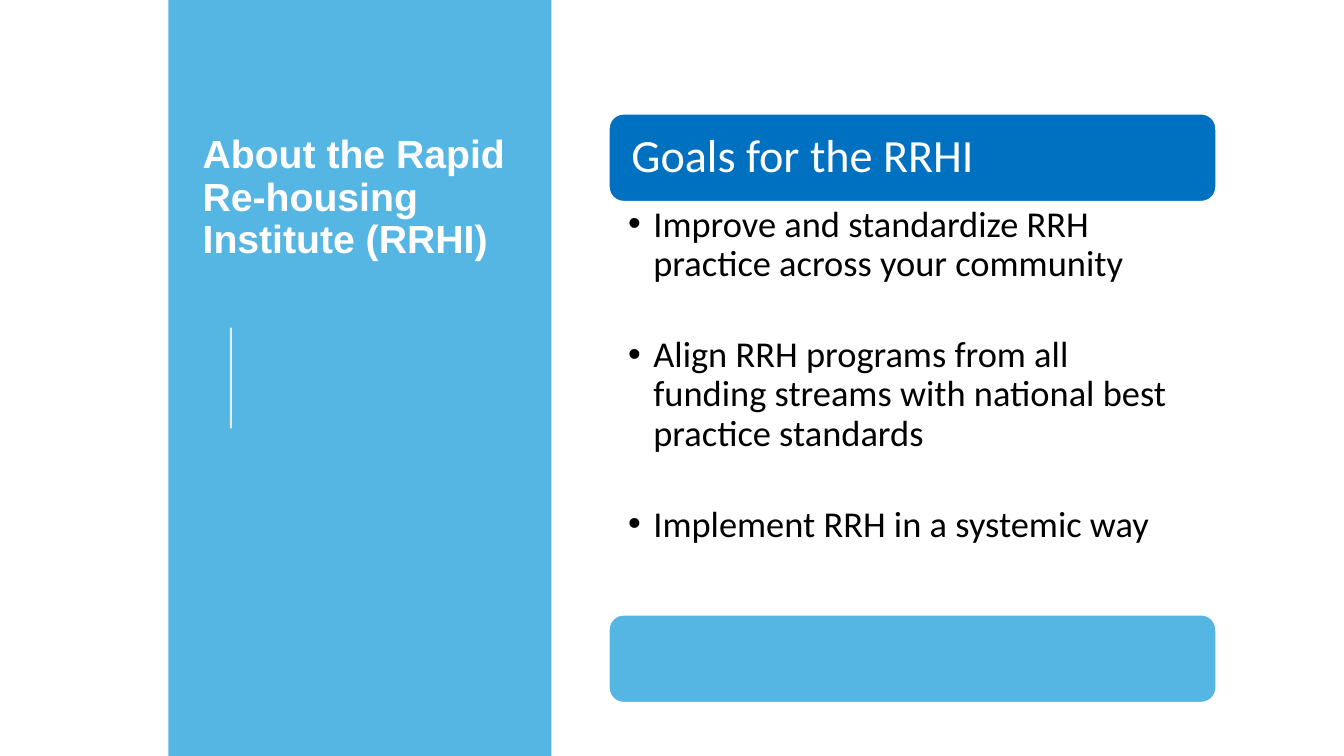
from lxml.etree import SubElement
from pptx import Presentation
from pptx.dml.color import RGBColor
from pptx.enum.shapes import MSO_CONNECTOR, MSO_SHAPE
from pptx.enum.text import MSO_ANCHOR, MSO_AUTO_SIZE, PP_ALIGN
from pptx.oxml.ns import qn
from pptx.util import Pt

PX = 9144
SKY, BLUE, WHITE, BLACK = "55B5E3", "0070C0", "FFFFFF", "000000"
GOALS = [
    "Improve and standardize RRH practice across your community",
    "Align RRH programs from all funding streams with national best practice standards",
    "Implement RRH in a systemic way",
]


def px(length):
    """Turn whole px into EMU."""
    return length * PX


def colour(value):
    """Turn a hex string into a colour."""
    return RGBColor.from_string(value)


def add_block(slide, kind, box, fill, outline=None):
    """Add a filled shape, with a thin outline if one is given."""
    block = slide.shapes.add_shape(kind, *map(px, box))
    block.shadow.inherit = False
    block.fill.solid()
    block.fill.fore_color.rgb = colour(fill)
    if outline:
        block.line.color.rgb = colour(outline)
        block.line.width = Pt(1)
    else:
        block.line.fill.background()
    return block


def add_accent(slide, start, end):
    """Add a slightly transparent white line."""
    accent = slide.shapes.add_connector(MSO_CONNECTOR.STRAIGHT, *map(px, start + end))
    accent.line.color.rgb = colour(WHITE)
    accent.line.width = Pt(1.5)
    properties = accent.element.spPr
    SubElement(next(properties.iter(qn("a:srgbClr"))), qn("a:alpha"), val="80000")
    SubElement(properties, qn("a:effectLst"))


def place(holder, box):
    """Move and size a placeholder."""
    holder.left, holder.top, holder.width, holder.height = map(px, box)


def set_frame(holder, anchor, insets):
    """Set the anchor and insets of a text frame and return it."""
    frame = holder.text_frame
    frame.word_wrap = True
    frame.auto_size = MSO_AUTO_SIZE.NONE
    frame.vertical_anchor = anchor
    (frame.margin_left, frame.margin_top,
     frame.margin_right, frame.margin_bottom) = map(px, insets)
    return frame


def write(paragraph, wording, size, font, ink, bold=False):
    """Write one left-aligned run in a paragraph."""
    paragraph.alignment = PP_ALIGN.LEFT
    paragraph.line_spacing = 0.9
    paragraph.space_before = Pt(0)
    run = paragraph.add_run()
    run.text = wording
    run.font.size = Pt(size)
    run.font.name = font
    run.font.bold = bold
    run.font.color.rgb = colour(ink)


def write_goals(frame):
    """Write the goals as a spaced bullet list."""
    for index, goal in enumerate(GOALS):
        paragraph = frame.add_paragraph() if index else frame.paragraphs[0]
        write(paragraph, goal, 26, "Calibri", BLACK)
        paragraph.space_after = Pt(37)
        properties = paragraph._p.get_or_add_pPr()
        properties.set("marL", str(px(25)))
        properties.set("indent", str(px(-25)))
        SubElement(properties, qn("a:buChar"), char="•")


def main():
    """Build the slide and save it."""
    deck = Presentation()
    deck.slide_width, deck.slide_height = px(1333), px(750)
    slide = deck.slides.add_slide(deck.slide_layouts[1])
    title, goals = slide.placeholders

    panel = add_block(slide, MSO_SHAPE.RECTANGLE, (167, 0, 380, 750), SKY)
    slide.shapes.element.insert(2, panel.element)
    add_accent(slide, (229, 425), (229, 325))

    place(title, (191, -104, 356, 602))
    heading = set_frame(title, MSO_ANCHOR.MIDDLE, (10, 5, 10, 5))
    write(heading.paragraphs[0], "About the Rapid Re-housing Institute (RRHI)",
          28, "Arial", WHITE, bold=True)

    header = add_block(slide, MSO_SHAPE.ROUNDED_RECTANGLE, (604, 113, 602, 87), BLUE, WHITE)
    banner = set_frame(header, MSO_ANCHOR.MIDDLE, (18, 14, 18, 14))
    write(banner.paragraphs[0], "Goals for the RRHI", 33, "Calibri", WHITE)

    place(goals, (604, 199, 602, 411))
    write_goals(set_frame(goals, MSO_ANCHOR.TOP, (19, 5, 26, 5)))
    add_block(slide, MSO_SHAPE.ROUNDED_RECTANGLE, (604, 610, 602, 87), SKY, WHITE)

    deck.save("out.pptx")


if __name__ == "__main__":
    main()
